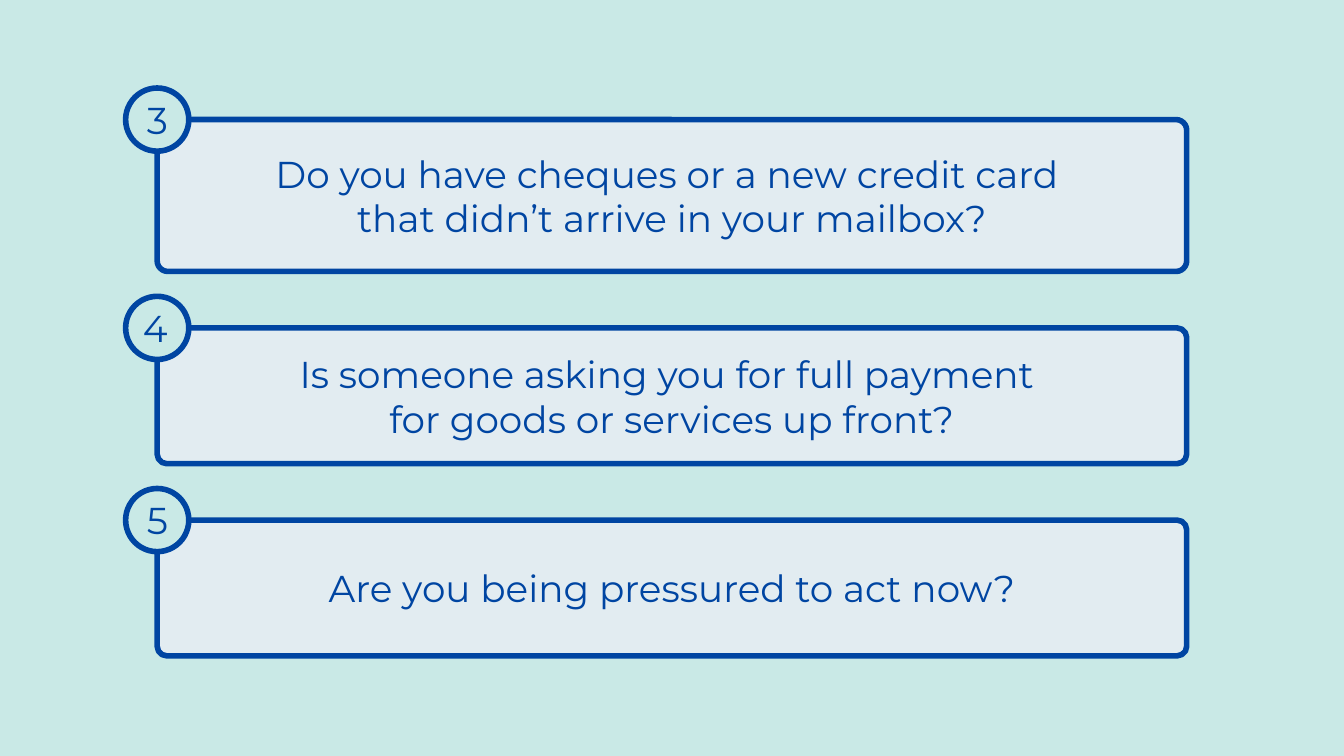
from dataclasses import dataclass

from pptx import Presentation
from pptx.dml.color import RGBColor
from pptx.enum.shapes import MSO_SHAPE as Shape
from pptx.enum.text import MSO_ANCHOR as Anchor, PP_ALIGN as Align
from pptx.util import Inches, Pt


@dataclass(frozen=True)
class Theme:
    background: RGBColor = RGBColor.from_string("C9E9E6")
    panel: RGBColor = RGBColor.from_string("E2ECF1")
    ink: RGBColor = RGBColor.from_string("0045A2")
    font: str = "Montserrat"
    text_size: Pt = Pt(20)
    line_width: Pt = Pt(3)


PAGE_WIDTH = 10
PAGE_HEIGHT = PAGE_WIDTH * 9 / 16
PANEL_LEFT, PANEL_WIDTH = 1.17, 7.66
BADGE_SIZE = 0.47
INSET = 0.1

# number, question, panel top, panel height, left inset of the number
QUESTIONS = [
    ("3", "Do you have cheques or a new credit card \nthat didn’t arrive in your mailbox?", 0.89, 1.13, 0.09),
    ("4", "Is someone asking you for full payment \nfor goods or services up front?", 2.44, 1.01, 0.06),
    ("5", "Are you being pressured to act now?", 3.87, 1.01, 0.09),
]


class QuestionPage:
    def __init__(self, deck, theme):
        self.theme = theme
        self.page = deck.slides.add_slide(deck.slide_layouts[6])
        fill = self.page.background.fill
        fill.solid()
        fill.fore_color.rgb = theme.background

    def outlined_shape(self, kind, left, top, width, height, color, text, left_inset=INSET):
        theme = self.theme
        box = self.page.shapes.add_shape(
            kind, Inches(left), Inches(top), Inches(width), Inches(height))
        box.shadow.inherit = False
        box.fill.solid()
        box.fill.fore_color.rgb = color
        box.line.color.rgb = theme.ink
        box.line.width = theme.line_width

        frame = box.text_frame
        frame.word_wrap = True
        frame.vertical_anchor = Anchor.MIDDLE
        frame.margin_left = Inches(left_inset)
        frame.margin_top = frame.margin_right = frame.margin_bottom = Inches(INSET)
        para = frame.paragraphs[0]
        para.text = text
        para.alignment = Align.CENTER
        para.font.name = theme.font
        para.font.size = theme.text_size
        para.font.color.rgb = theme.ink
        return box

    def panel(self, top, height, question):
        box = self.outlined_shape(Shape.ROUNDED_RECTANGLE, PANEL_LEFT, top,
                                  PANEL_WIDTH, height, self.theme.panel, question)
        box.adjustments[0] = 0.07

    def badge(self, panel_top, number, left_inset):
        """Draw a numbered circle centred on the panel's top left corner."""
        radius = BADGE_SIZE / 2
        self.outlined_shape(Shape.OVAL, PANEL_LEFT - radius, panel_top - radius,
                            BADGE_SIZE, BADGE_SIZE, self.theme.background,
                            number, left_inset)


def main():
    deck = Presentation()
    deck.slide_width, deck.slide_height = Inches(PAGE_WIDTH), Inches(PAGE_HEIGHT)
    page = QuestionPage(deck, Theme())
    for number, question, top, height, number_inset in QUESTIONS:
        page.panel(top, height, question)
        page.badge(top, number, number_inset)
    deck.save("out.pptx")


if __name__ == "__main__":
    main()
